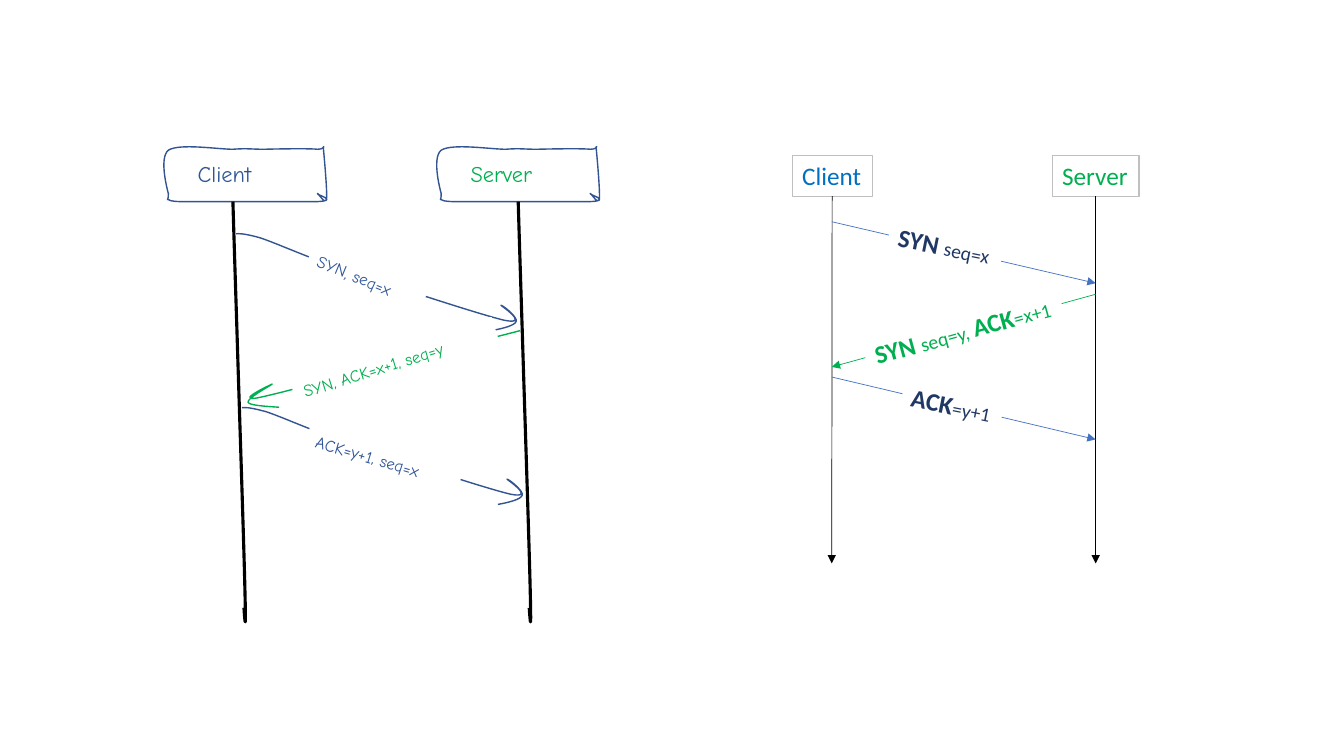
from lxml import etree
from pptx import Presentation
from pptx.dml.color import RGBColor
from pptx.enum.shapes import MSO_CONNECTOR, MSO_SHAPE
from pptx.enum.text import MSO_ANCHOR, MSO_AUTO_SIZE, PP_ALIGN
from pptx.oxml.ns import qn
from pptx.util import Pt

STRAIGHT = MSO_CONNECTOR.STRAIGHT
RECT = MSO_SHAPE.RECTANGLE
GROW = MSO_AUTO_SIZE.SHAPE_TO_FIT_TEXT
TOP, LEFT = MSO_ANCHOR.TOP, PP_ALIGN.LEFT
BOTTOM = 2
SKETCH_FONT, TIDY_FONT = "Comic Neue", "Calibri"
COLORS = {
    "white": "FFFFFF", "black": "000000", "green": "00B050", "border": "BFBFBF",
    "pen": "325491", "ink": "2F5597", "client": "0070C0", "arrow": "4472C4",
    "navy": "203864",
}

# Hand-drawn strokes: a start point, then segments of one point (line)
# or three points (cubic curve), in points.
CARD = [
    (2.9, 2.9),
    [(-4.3, 8.6), (2.9, 33.8), (2.9, 33.8)],
    [(2.9, 40.3), (1.4, 37.4), (2.9, 38.2)],
    [(4.3, 39.6), (11.5, 39.6), (11.5, 39.6)],
    [(109.4, 39.6)],
    [(125.3, 38.9), (108, 34.6), (109.4, 33.8)],
    [(110.2, 33.8), (115.2, 42.5), (115.9, 37.4)],
    [(116.6, 32.4), (113.8, 2.9), (113.8, 2.9)],
    [(113, -2.9), (116.6, 2.2), (109.4, 2.2)],
    [(102.2, 1.4), (71.3, 2.2), (71.3, 2.2)],
    [(61.2, 2.2), (59.8, 1.4), (49, 2.2)],
    [(38.2, 2.2), (10.8, -2.2), (2.9, 2.9)],
]
LIFELINE = [
    (0, 0),
    [(0.7, 23), (1.4, 46), (2.9, 92.2)],
    [(4.3, 139), (7.9, 245.5), (8.6, 277.9)],
    [(9.4, 311), (8.6, 300.2), (7.9, 290.2)],
]
REQUEST = [
    (0, 0),
    [(2.2, 0), (4.3, -0.7), (17.3, 2.9)],
    [(30.2, 7.2), (48.2, 15.8), (77.8, 25.9)],
    [(106.6, 35.3), (173.5, 57.6), (192.2, 61.9)],
    [(211, 65.5), (188, 50.4), (189.4, 51.1)],
    [(190.8, 51.1), (201.6, 59.8), (200.2, 62.6)],
    [(199.4, 65.5), (190.8, 67.7), (182.9, 69.1)],
]
REPLY = [
    (0, 0),
    [(-84.2, 21.6)],
    [(-115.9, 29.5), (-173.5, 45.4), (-188.6, 48.2)],
    [(-203.8, 50.4), (-175.7, 37.4), (-177.1, 38.2)],
    [(-177.8, 38.9), (-195.1, 48.2), (-194.4, 51.1)],
    [(-193.7, 53.3), (-182.9, 54), (-172.1, 54.7)],
]


def rgb(name):
    return RGBColor.from_string(COLORS[name])


def add_stroke(slide, x, y, stroke, color, weight, close=False):
    """Freeform through the segment ends, with its curves bent afterwards."""
    start, *segments = stroke
    builder = slide.shapes.build_freeform(Pt(x + start[0]), Pt(y + start[1]))
    builder.add_line_segments(
        [(Pt(x + s[-1][0]), Pt(y + s[-1][1])) for s in segments], close=close)
    sp = builder.convert_to_shape()
    sp.shadow.inherit = False
    sp.fill.background()
    sp.line.color.rgb = rgb(color)
    sp.line.width = Pt(weight)
    for node, segment in zip(list(sp._element.iter(qn("a:lnTo"))), segments):
        if len(segment) == 3:
            curve = etree.Element(qn("a:cubicBezTo"))
            for px, py in segment:
                etree.SubElement(curve, qn("a:pt"), x=str(Pt(x + px) - sp.left),
                                 y=str(Pt(y + py) - sp.top))
            node.getparent().replace(node, curve)


def add_label(slide, x, y, w, h, runs, font, color, angle=0, fill=None, border=None):
    """Rectangle holding one line of (text, size, bold) runs."""
    sp = slide.shapes.add_shape(RECT, Pt(x), Pt(y), Pt(w), Pt(h))
    sp.shadow.inherit = False
    sp.rotation = angle
    if fill:
        sp.fill.solid()
        sp.fill.fore_color.rgb = rgb(fill)
    else:
        sp.fill.background()
    if border:
        sp.line.color.rgb = rgb(border)
        sp.line.width = Pt(0.75)
    else:
        sp.line.fill.background()
    tf = sp.text_frame
    tf.word_wrap = False
    tf.auto_size = GROW
    tf.vertical_anchor = TOP
    p = tf.paragraphs[0]
    p.alignment = LEFT
    p.font.name = font
    p.font.color.rgb = rgb(color)
    for text, size, bold in runs:
        r = p.add_run()
        r.text = text
        r.font.size = Pt(size)
        r.font.bold = bold
    return sp


def add_arrow(slide, x1, y1, x2, y2, color):
    line = slide.shapes.add_connector(STRAIGHT, Pt(x1), Pt(y1), Pt(x2), Pt(y2))
    line.line.color.rgb = rgb(color)
    line.line.width = Pt(0.5)
    etree.SubElement(line.line._get_or_add_ln(), qn("a:tailEnd"), type="triangle")
    etree.SubElement(line._element.spPr, qn("a:effectLst"))
    return line


def draw_sketch(slide, x, y, w):
    """Hand-drawn handshake, w wide."""
    server_x = x + w - 116.5
    for left, name, width, color in ((x, "Client", 66.24, "ink"),
                                     (server_x, "Server", 71.28, "green")):
        add_stroke(slide, left, y, CARD, "pen", 1, close=True)
        add_label(slide, left + 16.8, y + 6.5, width, 26.66,
                  [(name, 16, False)], SKETCH_FONT, color)
    for dx in (49, 252.8):
        add_stroke(slide, x + dx, y + 39.6, LIFELINE, "black", 2.25)
    for dx, dy, stroke, color in ((51.1, 62.6, REQUEST, "pen"),
                                  (55.4, 186.8, REQUEST, "pen"),
                                  (254.2, 131.8, REPLY, "green")):
        add_stroke(slide, x + dx, y + dy, stroke, color, 1)
    for dx, dy, width, angle, text, color in (
            (100.08, 84.96, 87.84, 22.4, "SYN, seq=x", "ink"),
            (89.28, 144, 151.2, 342.6, "SYN, ACK=x+1, seq=y", "green"),
            (99.36, 213.84, 113.76, 16.4, "ACK=y+1, seq=x", "ink")):
        add_label(slide, x + dx, y + dy, width, 21.81, [(text, 12, False)],
                  SKETCH_FONT, color, angle, "white")


def draw_tidy(slide, x, y, w, h):
    """Ruled handshake filling the given box."""
    client_w, server_w, card_h = 57, 62, 29.08
    client_x, server_x = x + 28.2, x + w - server_w / 2
    for left, width, name, color, foot in (
            (x, client_w, "Client", "client", client_x),
            (x + w - server_w, server_w, "Server", "green", server_x)):
        card = add_label(slide, left, y, width, card_h, [(name, 18, False)],
                         TIDY_FONT, color, border="border")
        lifeline = add_arrow(slide, left + width / 2, y + card_h, foot, y + h, "black")
        lifeline.begin_connect(card, BOTTOM)

    syn, ack = ("SYN ", 18, True), ("ACK", 18, True)
    for x1, y1, x2, y2, line_color, label, angle, runs, color in (
            (client_x, 47.3, server_x, 91.2, "arrow", (68.4, 50.2, 82.1), 11.3,
             [syn, ("seq=x", 14, False)], "navy"),
            (server_x, 99.1, client_x, 151, "green", (49.7, 110.7, 145.4), 344.5,
             [syn, ("seq=y, ", 14, False), ack, ("=x+1", 14, False)], "green"),
            (client_x, 158.2, server_x, 202.8, "arrow", (77.8, 163.9, 72.7), 11.5,
             [ack, ("=y+1", 14, False)], "navy")):
        add_arrow(slide, x1, y + y1, x2, y + y2, line_color)
        dx, dy, width = label
        add_label(slide, x + dx, y + dy, width, card_h, runs, TIDY_FONT, color,
                  angle, "white")


def main():
    prs = Presentation()
    prs.slide_width, prs.slide_height = Pt(960), Pt(540)
    slide = prs.slides.add_slide(prs.slide_layouts[6])
    draw_sketch(slide, 117.36, 104.4, 311.4)
    draw_tidy(slide, 565.92, 111.1, 247.7, 291.4)
    prs.save("out.pptx")


if __name__ == "__main__":
    main()
